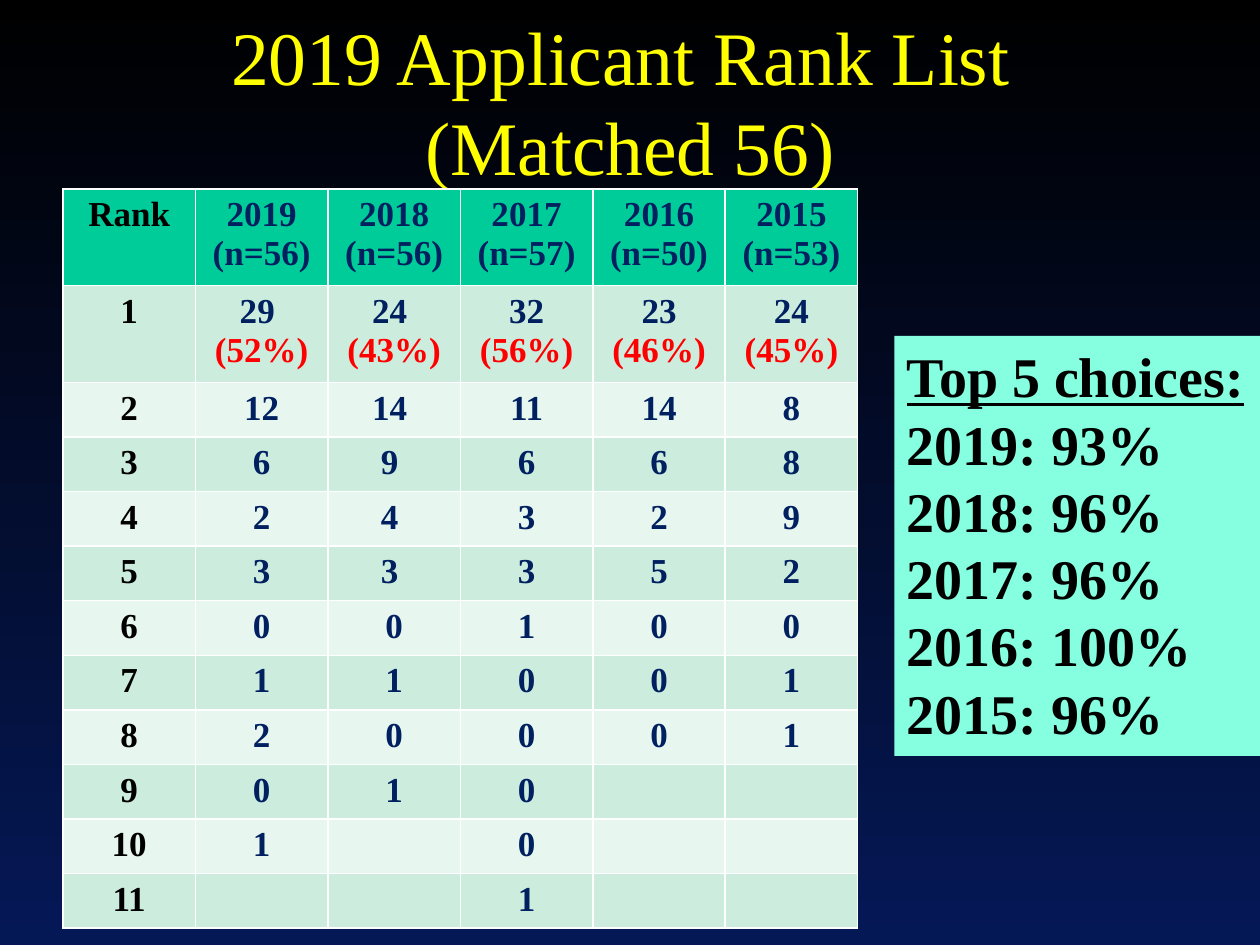
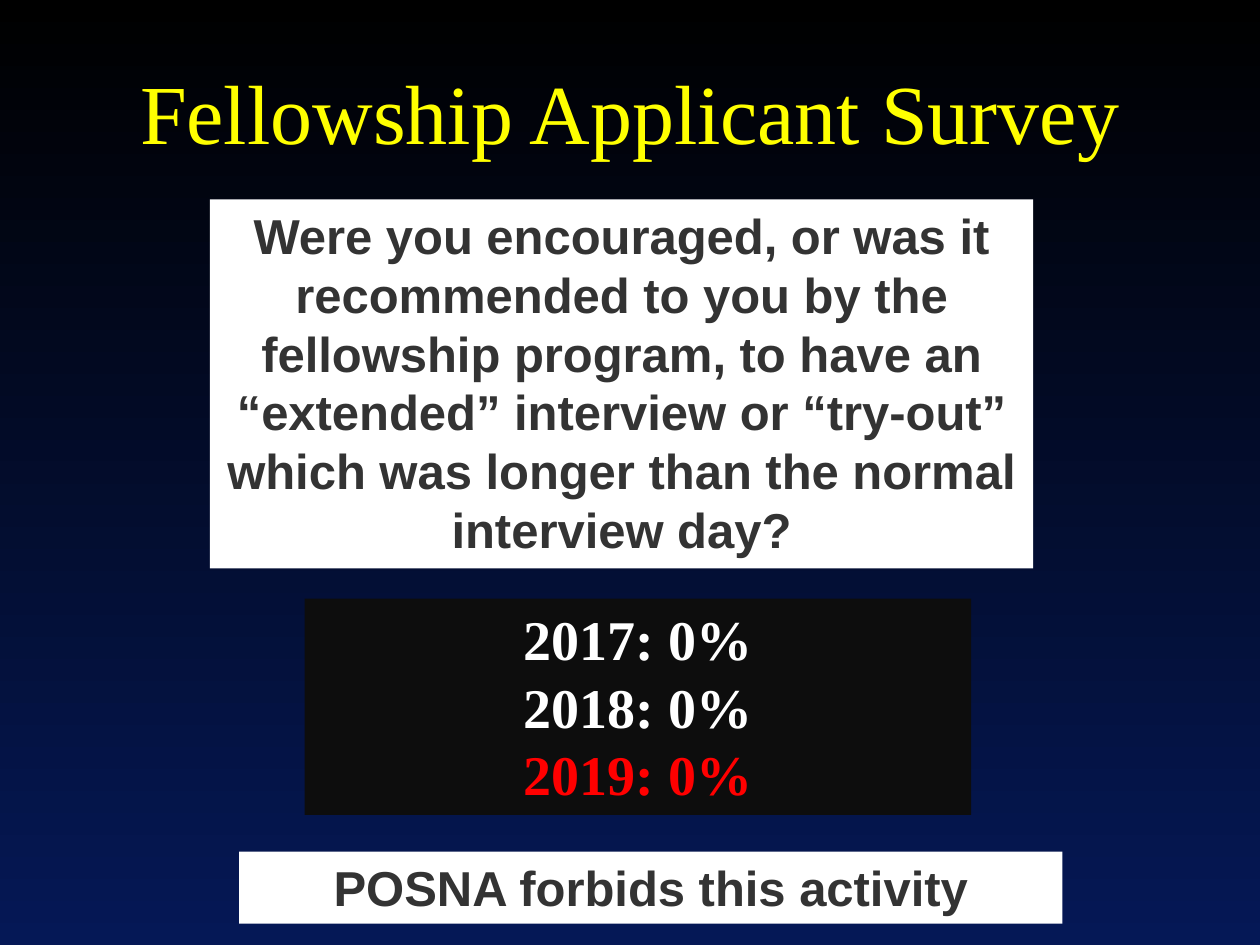
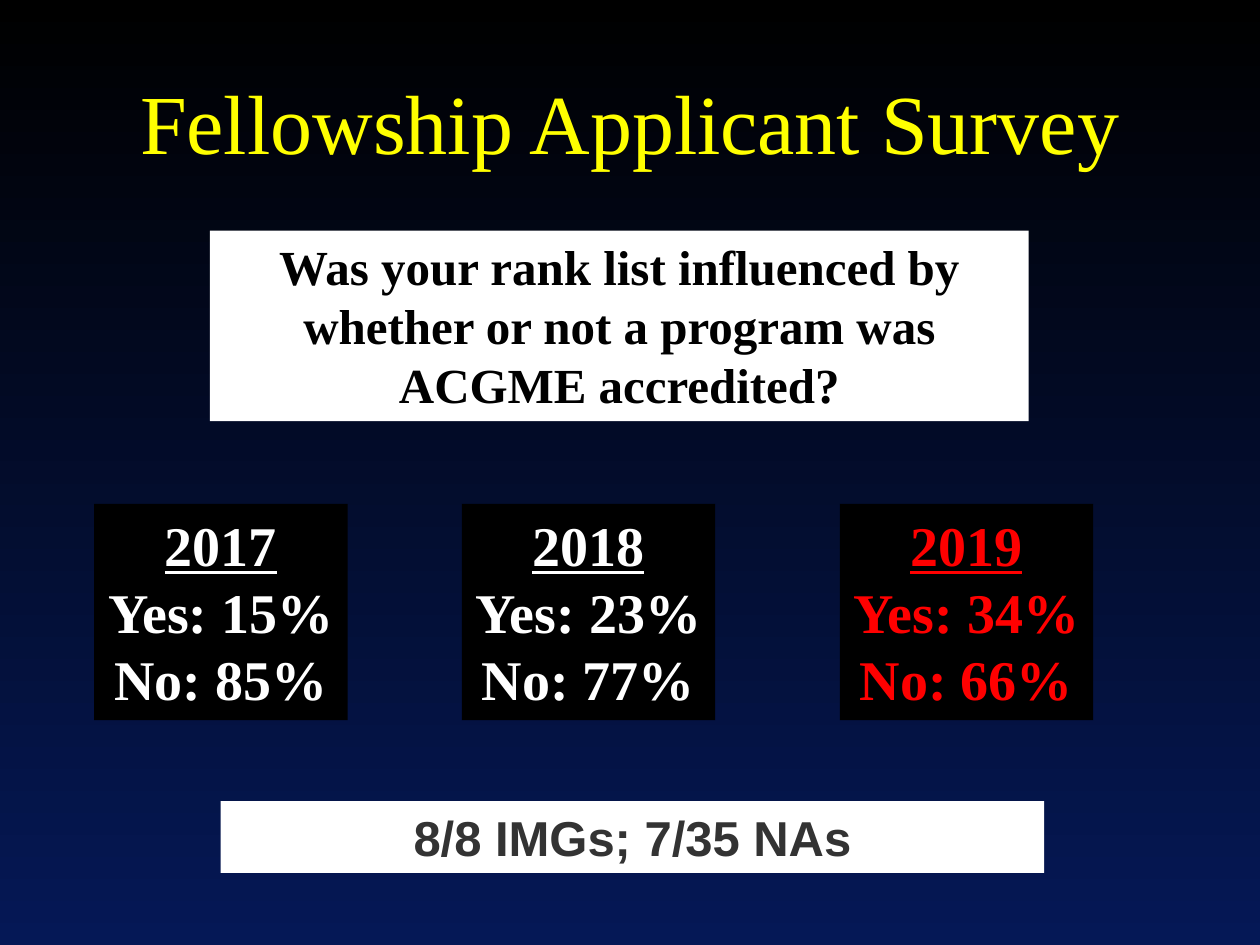
from lxml import etree
from pptx import Presentation
from pptx.dml.color import RGBColor
from pptx.enum.shapes import MSO_SHAPE
from pptx.enum.text import MSO_ANCHOR, MSO_AUTO_SIZE, PP_ALIGN
from pptx.oxml.ns import qn
from pptx.util import Cm, Pt

RECT = MSO_SHAPE.RECTANGLE
LEFT, CENTER = PP_ALIGN.LEFT, PP_ALIGN.CENTER
TOP, MIDDLE = MSO_ANCHOR.TOP, MSO_ANCHOR.MIDDLE
FIXED, GROW = MSO_AUTO_SIZE.NONE, MSO_AUTO_SIZE.SHAPE_TO_FIT_TEXT

SERIF, SANS = "Times New Roman", "Arial"
BLACK, WHITE, YELLOW, RED = "000000", "FFFFFF", "FFFF00", "FF0000"
NAVY, MIDNIGHT, CHARCOAL, GREY = "002060", "051856", "0D0D0D", "333333"
GREEN, MINT, PALE, AQUA = "00CC99", "CCECDE", "E7F6EF", "85FFE0"

RANKS = [
    ["Rank", "2019\n(n=56)", "2018\n(n=56)", "2017\n(n=57)", "2016 (n=50)", "2015 (n=53)"],
    ["1", "29 \n(52%)", "24 \n(43%)", "32 (56%)", "23 (46%)", "24 (45%)"],
    ["2", "12", "14 ", "11", "14", "8"],
    ["3", "6", "9 ", "6", "6", "8"],
    ["4", "2", "4 ", "3", "2", "9"],
    ["5", "3", "3 ", "3", "5", "2"],
    ["6", "0", "0", "1", "0", "0"],
    ["7", "1", "1", "0", "0", "1"],
    ["8", "2", "0", "0", "0", "1"],
    ["9", "0", "1", "0", "", ""],
    ["10", "1", "", "0", "", ""],
    ["11", "", "", "1", "", ""],
]


def rgb(color):
    return RGBColor.from_string(color)


def add_run(p, text, size, color, font=SERIF, bold=True, underline=False):
    r = p.add_run()
    r.text = text
    r.font.name, r.font.size = font, Pt(size)
    r.font.bold, r.font.underline = bold, underline
    r.font.color.rgb = rgb(color)


def paragraphs(tf, count):
    """Return count paragraphs, starting with the one the frame already has."""
    return [tf.paragraphs[0]] + [tf.add_paragraph() for _ in range(count - 1)]


def set_borders(cell, color, width):
    tc_pr = cell._tc.get_or_add_tcPr()
    for index, side in enumerate(("lnL", "lnR", "lnT", "lnB")):
        ln = etree.Element(qn(f"a:{side}"), w=str(Pt(width)))
        fill = etree.SubElement(ln, qn("a:solidFill"))
        etree.SubElement(fill, qn("a:srgbClr"), val=color)
        tc_pr.insert(index, ln)


class Deck:
    def __init__(self):
        self.prs = Presentation()
        self.prs.slide_width, self.prs.slide_height = Cm(25.4), Cm(19.05)
        self.s = None
        fill = self.prs.slide_master.background.fill
        fill.gradient()
        fill.gradient_angle = 270
        for stop, position, color in zip(fill.gradient_stops, (0, 1), (BLACK, MIDNIGHT)):
            stop.position = position
            stop.color.rgb = rgb(color)

    def slide(self, title, top, size=48):
        self.s = self.prs.slides.add_slide(self.prs.slide_layouts[5])
        sp = self.s.shapes.title
        sp.left, sp.top, sp.width, sp.height = Cm(1.9), Cm(top), Cm(21.6), Cm(3.18)
        tf = sp.text_frame
        tf.auto_size, tf.vertical_anchor, tf.word_wrap = FIXED, MIDDLE, True
        p = tf.paragraphs[0]
        p.alignment, p.line_spacing = CENTER, Pt(size * 1.2)
        for i, line in enumerate(title.split("\n")):
            if i:
                p.add_line_break()
            add_run(p, line, size, YELLOW, bold=False)

    def box(self, x, y, w, h, fill, lines, size=32, font=SERIF, align=CENTER, wrap=True):
        """Draw a filled box; each line is (text, colour) or (text, colour, underline)."""
        sp = self.s.shapes.add_shape(RECT, Cm(x), Cm(y), Cm(w), Cm(h))
        sp.shadow.inherit = False
        sp.fill.solid()
        sp.fill.fore_color.rgb = rgb(fill)
        sp.line.fill.background()
        tf = sp.text_frame
        tf.word_wrap, tf.auto_size, tf.vertical_anchor = wrap, GROW, TOP
        for p, (text, color, *underline) in zip(paragraphs(tf, len(lines)), lines):
            p.alignment, p.line_spacing = align, Pt(size * 1.2)
            add_run(p, text, size, color, font, underline=any(underline))

    def note(self, x, y, h, text):
        self.box(x, y, 16.6, h, WHITE, [(text, GREY)], 28, SANS)

    def table(self, x, y, col_width, tall, short, rows):
        """Draw the rank table; its first two rows are tall."""
        heights = [tall] * 2 + [short] * (len(rows) - 2)
        columns = len(rows[0])
        table = self.s.shapes.add_table(len(rows), columns, Cm(x), Cm(y),
                                        Cm(col_width * columns), Cm(sum(heights))).table
        for column in table.columns:
            column.width = Cm(col_width)
        for i, (row, height) in enumerate(zip(rows, heights)):
            table.rows[i].height = Cm(height)
            for j, text in enumerate(row):
                cell = table.cell(i, j)
                cell.fill.solid()
                cell.fill.fore_color.rgb = rgb((MINT if i % 2 else PALE) if i else GREEN)
                set_borders(cell, WHITE, 1)
                self.cell_text(cell, text, NAVY if j else BLACK, RED if i else NAVY)

    def cell_text(self, cell, text, color, bracket_color):
        lines = text.split("\n")
        for p, line in zip(paragraphs(cell.text_frame, len(lines)), lines):
            p.alignment = CENTER
            count, bracket, rest = line.partition("(")
            for part, part_color in ((count, color), (bracket + rest, bracket_color)):
                if part:
                    add_run(p, part, 20, part_color)


def main():
    deck = Deck()

    deck.slide("2019 Applicant Rank List \n(Matched 56)", 0.43, 43.2)
    deck.table(1.27, 3.81, 2.67, 1.95, 1.1, RANKS)
    top_five = {2019: 93, 2018: 96, 2017: 96, 2016: 100, 2015: 96}
    deck.box(18.03, 6.77, 7.37, 8.47, AQUA,
             [("Top 5 choices:", BLACK, True)]
             + [(f"{year}: {share}%", BLACK) for year, share in top_five.items()],
             align=LEFT, wrap=False)

    deck.slide("Fellowship Applicant Survey", 0.64)
    deck.note(4.23, 4.02, 7.44,
              "Were you encouraged, or was it recommended to you by the fellowship program, "
              "to have an “extended” interview or “try-out” which was longer than the normal "
              "interview day?")
    deck.box(6.14, 12.07, 13.44, 4.36, CHARCOAL,
             [("2017: 0%", WHITE), ("2018: 0%", WHITE), ("2019: 0%", RED)])
    deck.note(4.82, 17.17, 1.45, "POSNA forbids this activity")

    deck.slide("Fellowship Applicant Survey", 0.84)
    deck.box(4.23, 4.65, 16.51, 3.84, WHITE,
             [("Was your rank list influenced by whether or not a program was "
               "ACGME accredited?", BLACK)], 28)
    answers = [(1.9, 2017, 15, WHITE), (9.31, 2018, 23, WHITE), (16.93, 2019, 34, RED)]
    for x, year, yes, color in answers:
        deck.box(x, 10.16, 5.11, 4.36, BLACK,
                 [(str(year), color, True), (f"Yes: {yes}%", color),
                  (f"No: {100 - yes}%", color)], wrap=False)
    deck.note(4.45, 16.15, 1.45, "8/8 IMGs; 7/35 NAs")

    deck.prs.save("out.pptx")


if __name__ == "__main__":
    main()
